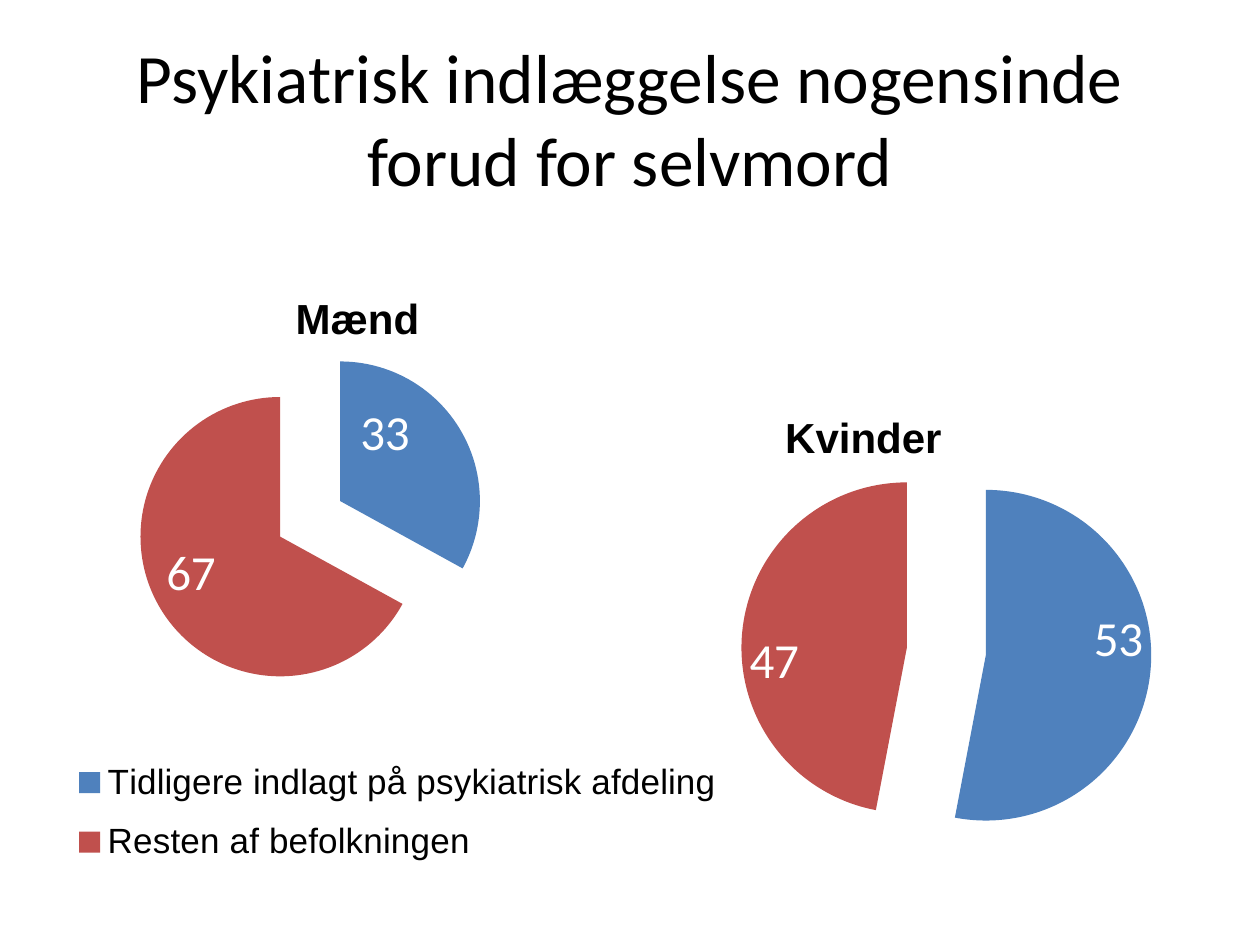
"""Build a slide with two exploded pie charts on psychiatric admission before suicide."""
from pptx import Presentation
from pptx.chart.data import CategoryChartData
from pptx.dml.color import RGBColor
from pptx.enum.chart import XL_CHART_TYPE, XL_LABEL_POSITION, XL_LEGEND_POSITION
from pptx.enum.text import MSO_ANCHOR, PP_ALIGN
from pptx.oxml import parse_xml
from pptx.oxml.ns import nsdecls, qn
from pptx.util import Emu, Pt

PX = 914400 // 126
PIE = XL_CHART_TYPE.PIE
INSIDE_END = XL_LABEL_POSITION.INSIDE_END
RIGHT = XL_LEGEND_POSITION.RIGHT
MIDDLE = MSO_ANCHOR.MIDDLE
CENTER = PP_ALIGN.CENTER
BLACK = RGBColor(0x00, 0x00, 0x00)
WHITE = RGBColor(0xFF, 0xFF, 0xFF)
BLUE = RGBColor(0x4F, 0x81, 0xBD)
RED = RGBColor(0xC0, 0x50, 0x4D)


def px(*lengths):
    return [Emu(n * PX) for n in lengths]


def set_font(font, name, size, color=BLACK, bold=False):
    font.name, font.size, font.bold = name, Pt(size), bold
    font.color.rgb = color


def place(parent, index, modes, **fractions):
    """Give a chart part a manual layout in fractions of the chart."""
    old = parent.find(qn("c:layout"))
    if old is not None:
        parent.remove(old)
    items = list(modes.items()) + list(fractions.items())
    body = "".join(f'<c:{tag} val="{val}"/>' for tag, val in items)
    parent.insert(index, parse_xml(
        f'<c:layout {nsdecls("c")}><c:manualLayout>{body}</c:manualLayout></c:layout>'))


class Deck:
    """Slide style and the slide being drawn."""

    EDGE = {"xMode": "edge", "yMode": "edge"}
    BODY, HEADING = "Calibri", "Arial"

    def __init__(self, width, height):
        self.prs = Presentation()
        self.prs.slide_width, self.prs.slide_height = px(width, height)
        self.s = self.prs.slides.add_slide(self.prs.slide_layouts[6])

    def title(self, text, *box):
        tf = self.s.shapes.add_textbox(*px(*box)).text_frame
        tf.word_wrap = True
        tf.vertical_anchor = MIDDLE
        p = tf.paragraphs[0]
        p.text, p.alignment = text, CENTER
        set_font(p.font, self.BODY, 39.6)

    def pie(self, name, categories, values, explosion, box, title_at, plot):
        data = CategoryChartData()
        data.categories = categories
        data.add_series(name, values)
        chart = self.s.shapes.add_chart(PIE, *px(*box), data).chart
        set_font(chart.font, self.BODY, 10)
        chart.has_legend = False
        chart.has_title = True
        p = chart.chart_title.text_frame.paragraphs[0]
        p.text = name
        set_font(p.font, self.HEADING, 24, bold=True)
        x, y = title_at
        place(chart.chart_title._element, 1, self.EDGE, x=x, y=y)

        x, y, w, h = plot
        area = chart._chartSpace.chart.plotArea
        place(area, 0, {"layoutTarget": "inner", **self.EDGE}, x=x, y=y, w=w, h=h)
        series = chart.plots[0].series[0]
        series.format.fill.solid()
        series.format.fill.fore_color.rgb = BLUE
        series._element.find(qn("c:spPr")).addnext(
            parse_xml(f'<c:explosion {nsdecls("c")} val="{explosion}"/>'))
        for i, color in enumerate((BLUE, RED)):
            fill = series.points[i].format.fill
            fill.solid()
            fill.fore_color.rgb = color
        labels = series.data_labels
        labels.show_value = True
        labels.position = INSIDE_END
        set_font(labels.font, self.BODY, 28, WHITE)
        return chart

    def move_label(self, chart, index, x, y):
        series = chart.plots[0].series[0]
        label = series.points[index].data_label
        label.position = INSIDE_END
        set_font(label.font, self.BODY, 28, WHITE)
        place(series._element.xpath(".//c:dLbl")[0], 1, {}, x=x, y=y)

    def legend(self, chart, x, y, w, h):
        chart.has_legend = True
        chart.legend.position = RIGHT
        chart.legend.include_in_layout = False
        set_font(chart.legend.font, self.HEADING, 20)
        place(chart.legend._element, 1, self.EDGE, x=x, y=y, w=w, h=h)


def main():
    deck = Deck(1260, 945)
    deck.title("Psykiatrisk indlæggelse nogensinde forud for selvmord", 63, 38, 1134, 158)
    women = deck.pie(
        "Kvinder", ("Tidligere indlagt på psykiatrisk afdeling", "Resten af befolkningen"),
        (53, 47), 24, (54, 314, 1206, 631), (0.6, 0.14), (0.49, 0.21, 0.5, 0.65))
    deck.legend(women, 0.01, 0.68, 0.55, 0.22)
    men = deck.pie("Mænd", ("1", "2"), (33, 67), 25, (15, 214, 635, 496),
                   (0.43, 0.14), (0.19, 0.26, 0.55, 0.71))
    deck.move_label(men, 0, -0.07, -0.06)
    deck.prs.save("out.pptx")


if __name__ == "__main__":
    main()
